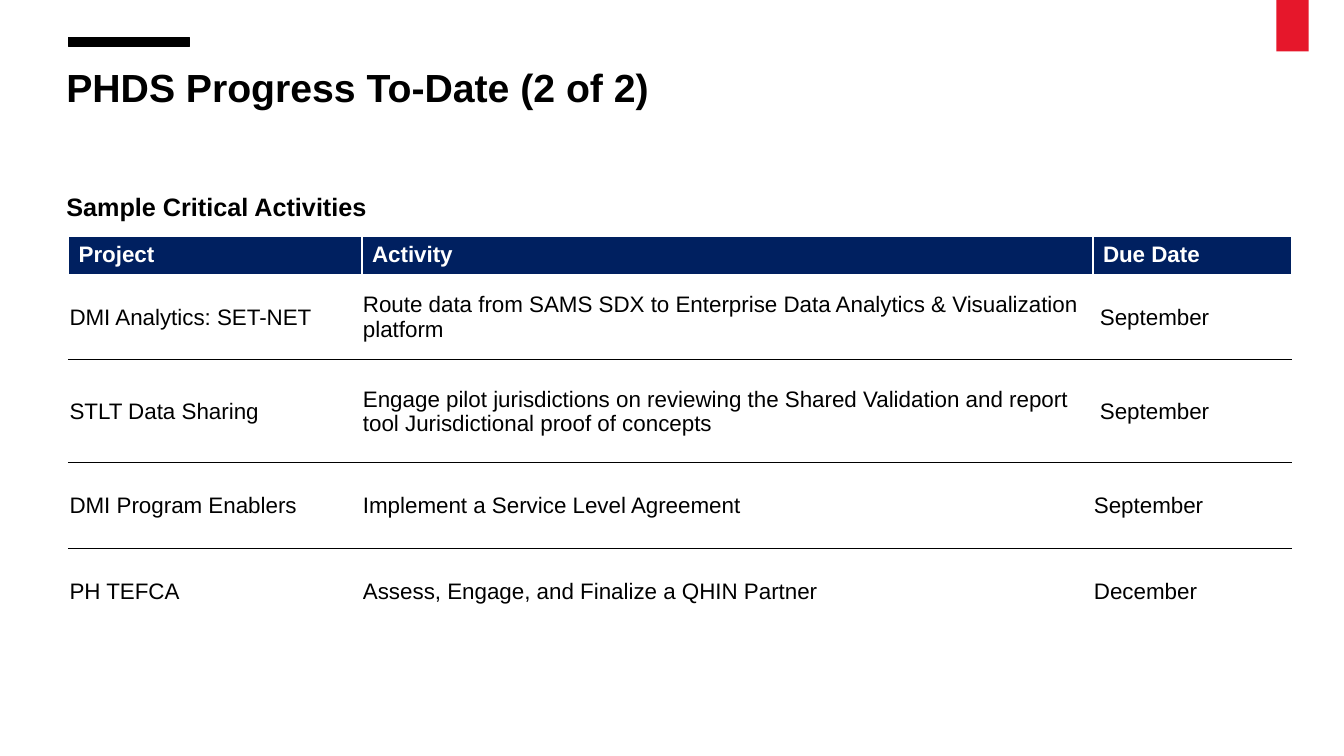
import pptx
import pptx.dml.color
import pptx.enum.shapes
import pptx.enum.text
import pptx.oxml
import pptx.oxml.ns
import pptx.util
from pptx.util import Inches

HUES = {"black": "000000", "white": "FFFFFF", "navy": "002060", "red": "E6172B"}
COLS = [2.91, 7.25, 1.97]
ROWS = [0.37, 0.85, 1.02, 0.85, 0.85]
HEAD = ["Project", "Activity", "Due Date"]
TASKS = [
    ["DMI Analytics: SET-NET",
     "Route data from SAMS SDX to Enterprise Data Analytics & Visualization platform",
     "September"],
    ["STLT Data Sharing",
     "Engage pilot jurisdictions on reviewing the Shared Validation and report tool "
     "Jurisdictional proof of concepts",
     "September"],
    ["DMI Program Enablers", "Implement a Service Level Agreement", "September"],
    ["PH TEFCA", "Assess, Engage, and Finalize a QHIN Partner", "December"],
]
INSET = 0.01
SHIFTED = {(1, 2), (2, 2)}  # due dates set slightly to the right


class Page:
    def __init__(self, slide, face="Arial"):
        self.slide = slide
        self.face = face

    def hue(self, name):
        return pptx.dml.color.RGBColor.from_string(HUES[name])

    def style(self, para, size, hue, bold):
        font = para.font
        font.name, font.size, font.bold = self.face, pptx.util.Pt(size), bold
        font.color.rgb = self.hue(hue)

    def text(self, words, box, size, space=1.0):
        frame = self.slide.shapes.add_textbox(*map(Inches, box)).text_frame
        frame.word_wrap = True
        para = frame.paragraphs[0]
        para.text = words
        para.line_spacing = space
        self.style(para, size, "black", True)

    def bar(self, box, hue, line=None):
        kind = pptx.enum.shapes.MSO_SHAPE.RECTANGLE
        shape = self.slide.shapes.add_shape(kind, *map(Inches, box))
        shape.shadow.inherit = False
        shape.fill.solid()
        shape.fill.fore_color.rgb = self.hue(hue)
        if line:
            shape.line.color.rgb = self.hue(hue)
            shape.line.width = pptx.util.Pt(line)
        else:
            shape.line.fill.background()

    def edge(self, cell, side, hue):
        cell._tc.get_or_add_tcPr().append(pptx.oxml.parse_xml(
            f'<a:ln{side} {pptx.oxml.ns.nsdecls("a")} w="12700"><a:solidFill>'
            f'<a:srgbClr val="{HUES[hue]}"/></a:solidFill></a:ln{side}>'))

    def cell(self, cell, words, head, sides, shift):
        cell.text = words
        self.style(cell.text_frame.paragraphs[0], 16, "white" if head else "black", head)
        if not head:
            cell.vertical_anchor = pptx.enum.text.MSO_ANCHOR.MIDDLE
            cell.margin_left = Inches(INSET + shift)
            cell.margin_top = cell.margin_right = Inches(INSET)
            cell.margin_bottom = 0
        for side in sides:
            self.edge(cell, side, "white" if head else "black")
        cell.fill.solid()
        cell.fill.fore_color.rgb = self.hue("navy" if head else "white")

    def table(self, rows, box):
        shape = self.slide.shapes.add_table(len(rows), len(COLS), *map(Inches, box))
        grid = shape.table
        grid.horz_banding = False
        for col, width in zip(grid.columns, COLS):
            col.width = Inches(width)
        for row, height in zip(grid.rows, ROWS):
            row.height = Inches(height)
        for r, row in enumerate(rows):
            # Rules run between the body rows only
            sides = "LRT" if r == 0 else "T" * (r > 1) + "B" * (r < len(rows) - 1)
            for c, words in enumerate(row):
                shift = 0.06 if (r, c) in SHIFTED else 0
                self.cell(grid.cell(r, c), words, r == 0, sides, shift)


def main():
    deck = pptx.Presentation()
    deck.slide_width, deck.slide_height = Inches(13.33), Inches(7.5)
    page = Page(deck.slides.add_slide(deck.slide_layouts[6]))

    # Title and accents
    page.text("PHDS Progress To-Date (2 of 2)", (0.56, 0.63, 12.13, 0.76), 28, 0.9)
    page.bar((12.66, 0, 0.32, 0.51), "red")
    page.bar((0.68, 0.37, 1.2, 0.09), "black", 1)

    # Activities
    page.table([HEAD] + TASKS, (0.68, 2.35, sum(COLS), sum(ROWS)))
    page.text("Sample Critical Activities", (0.56, 1.85, 3.75, 0.4), 18)

    deck.save("out.pptx")


if __name__ == "__main__":
    main()
